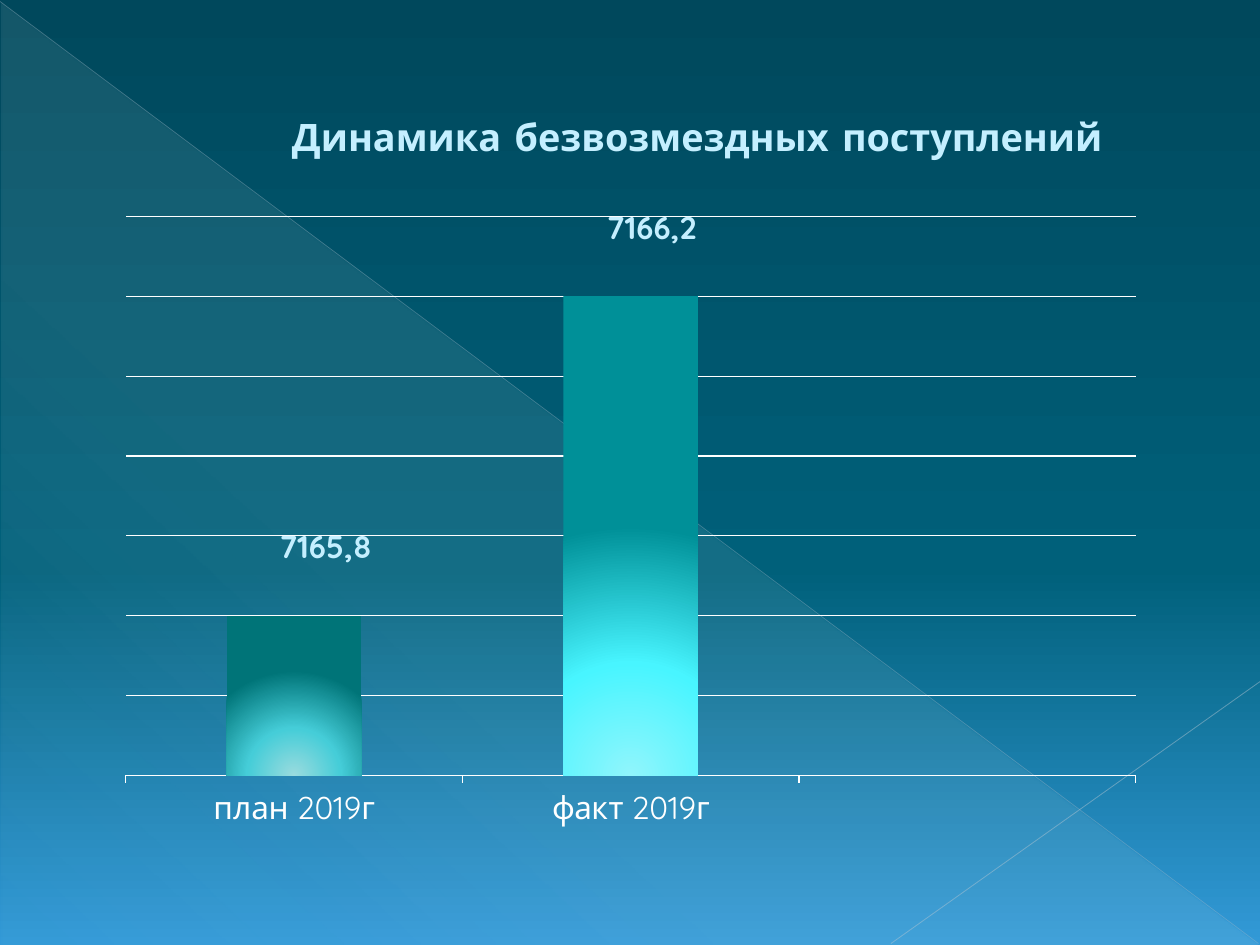
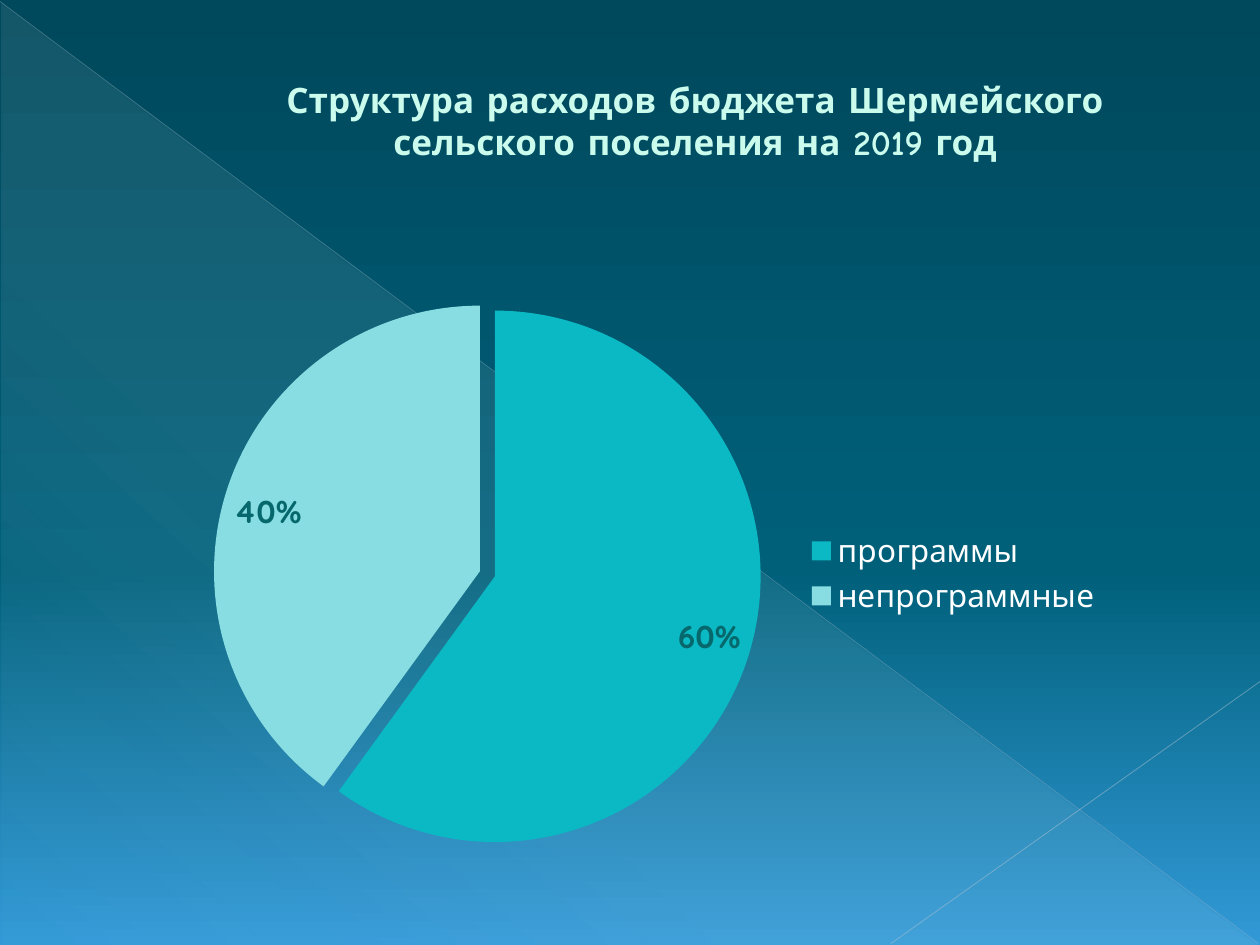
import pptx
import pptx.chart.data
import pptx.dml.color
import pptx.enum.chart
import pptx.enum.shapes
import pptx.enum.text
import pptx.oxml
import pptx.util
from pptx.oxml.ns import qn
from pptx.util import Cm, Pt
from lxml import etree

COLOURS = {
    "night": "00485C", "sea": "00607A", "sky": "3299D7",
    "veil": "DBF5F9", "long ray": "ACC0CE", "short ray": "B5C7D3",
    "income title": "C4EFFF", "spending title": "CAFBED", "white": "FFFFFF",
    "plan core": "9ADBDE", "plan glow": "45CDD8", "plan edge": "007478",
    "fact core": "90F5FC", "fact glow": "48F5FF", "fact edge": "009098",
    "programmes": "0AB9C3", "other": "87DDE1", "share": "06686C",
}
RGB = {name: pptx.dml.color.RGBColor.from_string(code) for name, code in COLOURS.items()}
TITLE_FONT, CHART_FONT = "Comic Neue", "Quicksand"
NO_LEADER_LINES = (
    '<c:extLst xmlns:c="http://schemas.openxmlformats.org/drawingml/2006/chart">'
    '<c:ext uri="{CE6537A1-D6FC-4f65-9D91-7224C49458BB}"'
    ' xmlns:c15="http://schemas.microsoft.com/office/drawing/2012/chart">'
    '<c15:showLeaderLines val="0"/></c:ext></c:extLst>')


def paint_gradient(fill, holder, stops, angle=None):
    """Fill with (position, colour, opacity) stops; without an angle, radially from the bottom."""
    fill.gradient()
    gradient = list(holder.iter(qn("a:gradFill")))[-1]
    for child in list(gradient):
        gradient.remove(child)
    stop_list = etree.SubElement(gradient, qn("a:gsLst"))
    for position, colour, opacity in stops:
        stop = etree.SubElement(stop_list, qn("a:gs"), pos=str(position * 1000))
        tint = etree.SubElement(stop, qn("a:srgbClr"), val=COLOURS[colour])
        if opacity < 100:
            etree.SubElement(tint, qn("a:alpha"), val=str(opacity * 1000))
    if angle is None:
        circle = etree.SubElement(gradient, qn("a:path"), path="circle")
        etree.SubElement(circle, qn("a:fillToRect"), l="50000", t="100000", r="50000", b="0")
    else:
        etree.SubElement(gradient, qn("a:lin"), ang=str(angle * 60000), scaled="0")


def make_layout(**places):
    """Return a manual chart layout from its entries, in schema order."""
    layout = pptx.oxml.parse_xml(
        '<c:layout xmlns:c="http://schemas.openxmlformats.org/drawingml/2006/chart"/>')
    manual = etree.SubElement(layout, qn("c:manualLayout"))
    for entry, value in places.items():
        etree.SubElement(manual, qn("c:" + entry), val=str(value))
    return layout


deck = pptx.Presentation()
deck.slide_width, deck.slide_height = Cm(25.4), Cm(19.05)
master = deck.slide_master
title_only = deck.slide_layouts[5]
income = deck.slides.add_slide(title_only)
spending = deck.slides.add_slide(title_only)

# Shared background
paint_gradient(master.background.fill, master.element,
               [(0, "night", 100), (60, "sea", 100), (100, "sky", 100)], 90)

# Shared veil and rays, drawn once and moved to the master
veil = income.shapes.add_shape(pptx.enum.shapes.MSO_SHAPE.RIGHT_TRIANGLE,
                               Cm(0.03), Cm(0.05), Cm(25.35), Cm(19))
veil.shadow.inherit = False
veil.line.fill.background()
paint_gradient(veil.fill, veil.element,
               [(0, "veil", 10), (70, "veil", 8), (100, "veil", 1)], 133)
decor = [veil]
for start, end, colour, width, opacity in [
    ((0, 0.03), (25.37, 19.02), "long ray", 0.39, 35),
    ((25.4, 13.74), (17.96, 19.02), "short ray", 0.47, 45),
]:
    ray = income.shapes.add_connector(pptx.enum.shapes.MSO_CONNECTOR.STRAIGHT,
                                      *map(Cm, start + end))
    ray.line.color.rgb = RGB[colour]
    ray.line.width = Pt(width)
    tint = next(ray.element.iter(qn("a:srgbClr")))
    etree.SubElement(tint, qn("a:alpha"), val=str(opacity * 1000))
    etree.SubElement(ray.element.spPr, qn("a:effectLst"))
    decor.append(ray)
master_tree = next(master.element.iter(qn("p:spTree")))
for order, part in enumerate(decor):
    next(part.element.iter(qn("p:cNvPr"))).set("id", str(20 + order))
    master_tree.insert(2 + order, part.element)

# Titles
for slide, place, inset, indent, size, colour, lines in [
    (income, (2.31, 1.96, 20.8, 1.37), 0.33, 2.7, 21.6, "income title",
     ["Динамика безвозмездных поступлений"]),
    (spending, (2.11, 1.12, 22.02, 2.59), 0.15, 1.78, 20, "spending title",
     ["Структура расходов бюджета Шермейского", "сельского поселения на 2019 год"]),
]:
    heading = slide.shapes.title
    heading.left, heading.top, heading.width, heading.height = map(Cm, place)
    frame = heading.text_frame
    frame.word_wrap = True
    frame.margin_top = Cm(inset)
    frame.vertical_anchor = pptx.enum.text.MSO_ANCHOR.MIDDLE
    paragraph = frame.paragraphs[0]
    paragraph.alignment = pptx.enum.text.PP_ALIGN.CENTER
    paragraph._p.get_or_add_pPr().set("marL", str(Cm(indent)))
    for number, line in enumerate(lines):
        if number:
            paragraph.add_line_break()
        run = paragraph.add_run()
        run.text = line
        run.font.name, run.font.size, run.font.bold = TITLE_FONT, Pt(size), True
        run.font.color.rgb = RGB[colour]

# Charts
charts = []
for slide, kind, place, categories, values, plot_place in [
    (income, "COLUMN_CLUSTERED", (2.11, 4.11, 21.21, 12.8),
     ["план 2019г", "факт 2019г"], [7165.8, 7166.2, None],
     {"x": 0.02, "y": 0.02, "w": 0.96, "h": 0.88}),
    (spending, "PIE", (2.31, 5.54, 21.01, 12.04),
     ["программы", "непрограммные"], [60, 40],
     {"x": 0.11, "y": 0.06, "w": 0.51, "h": 0.89}),
]:
    data = pptx.chart.data.CategoryChartData()
    data.categories = categories
    data.add_series("Series 1", values)
    chart = slide.shapes.add_chart(pptx.enum.chart.XL_CHART_TYPE[kind],
                                   *map(Cm, place), data).chart
    chart.has_title = False
    chart.has_legend = False
    chart.font.name, chart.font.size = CHART_FONT, Pt(18)
    chart.font.color.rgb = RGB["white"]
    plot_area = next(chart.element.iter(qn("c:plotArea")))
    for automatic in plot_area.findall(qn("c:layout")):
        plot_area.remove(automatic)
    plot_area.insert(0, make_layout(layoutTarget="inner", xMode="edge", yMode="edge",
                                    **plot_place))
    # The category count follows the values, so an unnamed place stays free
    category_cache = next(chart.element.iter(qn("c:cat")))
    next(category_cache.iter(qn("c:ptCount"))).set("val", str(len(values)))
    charts.append(chart)
income_chart, spending_chart = charts

# Income columns: axes
periods = income_chart.category_axis
periods.major_tick_mark = pptx.enum.chart.XL_TICK_MARK.OUTSIDE
amounts = income_chart.value_axis
amounts.visible = False
amounts.minimum_scale, amounts.maximum_scale, amounts.major_unit = 7165.6, 7166.3, 0.1
amounts.has_major_gridlines = True
for rule in (periods.format.line, amounts.major_gridlines.format.line):
    rule.color.rgb = RGB["white"]
    rule.width = Pt(0.75)

# Income columns: glow and value labels
columns = income_chart.plots[0]
columns.vary_by_categories = False
columns.gap_width = 150
for index, (name, text, shift_x) in enumerate([
    ("plan", "7165,8", 0.03), ("fact", "7166,2", 0.02),
]):
    column = columns.series[0].points[index]
    paint_gradient(column.format.fill, income_chart.element,
                   [(0, name + " core", 100), (45, name + " glow", 100),
                    (100, name + " edge", 100)])
    label = column.data_label
    run = label.text_frame.paragraphs[0].add_run()
    run.text = text
    run.font.name, run.font.size, run.font.bold = CHART_FONT, Pt(18), True
    run.font.color.rgb = RGB["income title"]
    label.position = pptx.enum.chart.XL_LABEL_POSITION.OUTSIDE_END
    label_xml = list(income_chart.element.iter(qn("c:dLbl")))[index]
    label_xml.insert(1, make_layout(x=shift_x, y=-0.07))
columns.series[0].data_labels.show_value = True
value_labels = next(income_chart.element.iter(qn("c:dLbls")))
for leader in value_labels.findall(qn("c:showLeaderLines")):
    leader.set("val", "0")
value_labels.append(pptx.oxml.parse_xml(NO_LEADER_LINES))

# Spending pie: slices and shares
pie = spending_chart.plots[0]
pie.vary_by_categories = False
for index, colour in enumerate(["programmes", "other"]):
    fill = pie.series[0].points[index].format.fill
    fill.solid()
    fill.fore_color.rgb = RGB[colour]
pulled_slice = list(spending_chart.element.iter(qn("c:dPt")))[1]
explosion = etree.Element(qn("c:explosion"), val="6")
pulled_slice.find(qn("c:spPr")).addprevious(explosion)
pie.has_data_labels = True
shares = pie.data_labels
shares.show_percentage, shares.show_value = True, False
shares.number_format, shares.number_format_is_linked = "0%", False
shares.position = pptx.enum.chart.XL_LABEL_POSITION.INSIDE_END
shares.font.name, shares.font.size, shares.font.bold = CHART_FONT, Pt(18), True
shares.font.color.rgb = RGB["share"]

# Spending pie: legend
spending_chart.has_legend = True
legend = spending_chart.legend
legend.position = pptx.enum.chart.XL_LEGEND_POSITION.RIGHT
legend.include_in_layout = False
legend_xml = next(spending_chart.element.iter(qn("c:legend")))
for automatic in legend_xml.findall(qn("c:layout")):
    legend_xml.remove(automatic)
legend_xml.find(qn("c:legendPos")).addnext(
    make_layout(xMode="edge", yMode="edge", x=0.66, y=0.42, w=0.29, h=0.16))

deck.save("out.pptx")
